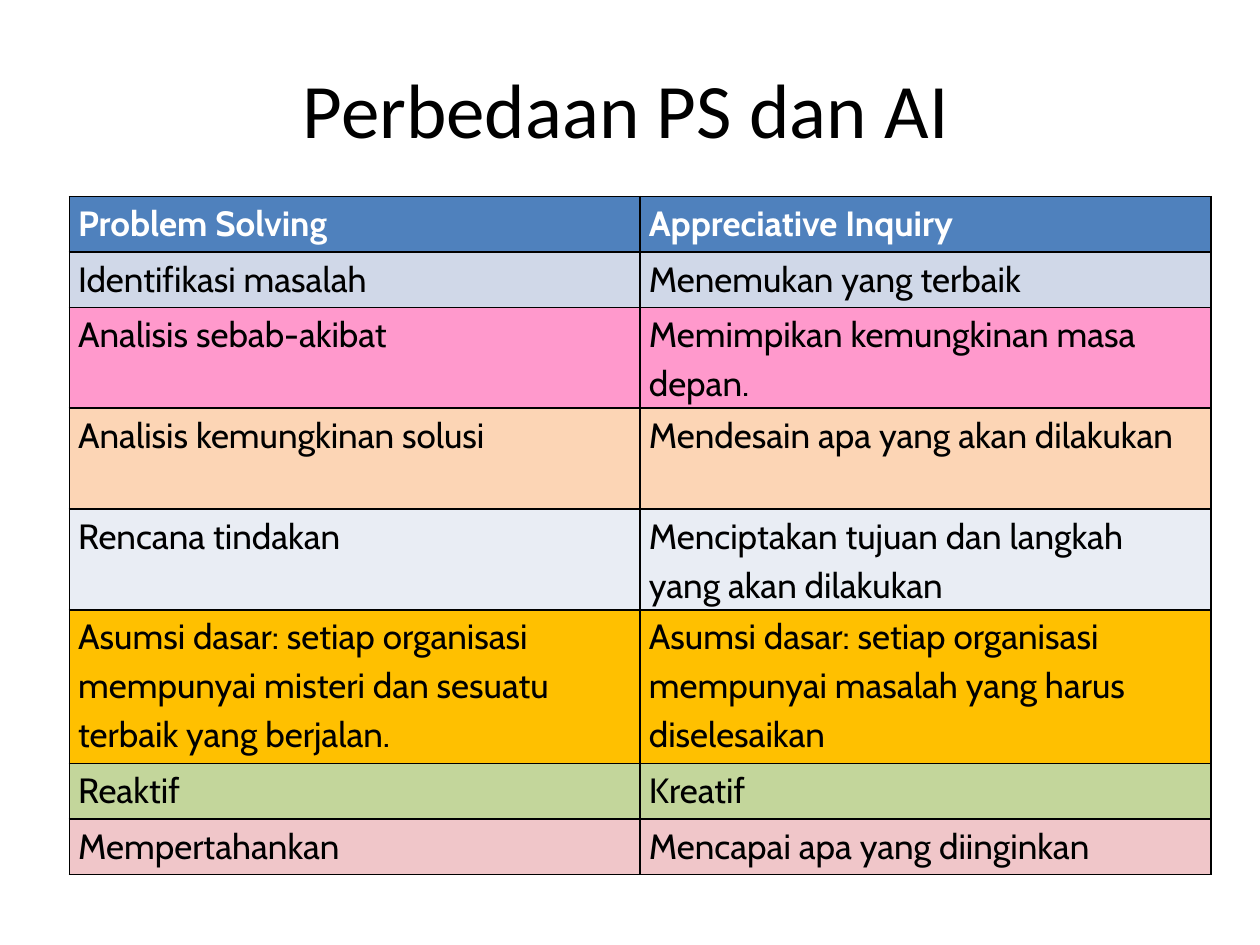
from lxml import etree
from pptx import Presentation
from pptx.dml.color import RGBColor
from pptx.enum.text import MSO_ANCHOR, PP_ALIGN
from pptx.oxml.ns import qn
from pptx.util import Inches, Pt

MIDDLE, TOP = MSO_ANCHOR.MIDDLE, MSO_ANCHOR.TOP
CENTER, LEFT, JUSTIFY = PP_ALIGN.CENTER, PP_ALIGN.LEFT, PP_ALIGN.JUSTIFY
TITLE_ONLY = 5

THEME = {
    "title": ("Calibri", 44),
    "body": ("Cabin", 20),
    "ink": "000000",
    "white": "FFFFFF",
    "head": "4F81BD",
    "blue": "D0D8E8",
    "pink": "FF99CC",
    "peach": "FCD5B5",
    "pale": "E9EDF4",
    "gold": "FFC000",
    "green": "C3D69B",
    "rose": "F0C6C9",
}
LINE = 0.44  # height of a one-line row
HEIGHTS = {1: LINE, 2: 0.8, 3: 1.22}

# fill, lines of text, alignment, left cell, right cell
ROWS = [
    ("head", 1, LEFT, "Problem Solving", "Appreciative Inquiry"),
    ("blue", 1, LEFT, "Identifikasi masalah", "Menemukan yang terbaik"),
    ("pink", 2, LEFT, "Analisis sebab-akibat", "Memimpikan kemungkinan masa depan."),
    ("peach", 2, LEFT, "Analisis kemungkinan solusi", "Mendesain apa yang akan dilakukan"),
    ("pale", 2, LEFT, "Rencana tindakan",
     "Menciptakan tujuan dan langkah yang akan dilakukan"),
    ("gold", 3, LEFT,
     "Asumsi dasar: setiap organisasi mempunyai misteri dan sesuatu terbaik yang berjalan.",
     "Asumsi dasar: setiap organisasi mempunyai masalah yang harus diselesaikan"),
    ("green", 1, JUSTIFY, "Reaktif", "Kreatif"),
    ("rose", 1, JUSTIFY, "Mempertahankan", "Mencapai apa yang diinginkan"),
]


def write(frame, text, style, color, align, bold=False):
    frame.text = text
    para = frame.paragraphs[0]
    para.alignment = align
    font = para.runs[0].font
    font.name, size = THEME[style]
    font.size = Pt(size)
    font.bold = bold
    font.color.rgb = RGBColor.from_string(THEME[color])
    return para


def frame_cell(cell):
    """Draw a thin line on all four sides; call before the cell is filled."""
    props = cell._tc.get_or_add_tcPr()
    for side in ("lnL", "lnR", "lnT", "lnB"):
        line = etree.SubElement(props, qn("a:" + side), w=str(Pt(1)))
        fill = etree.SubElement(line, qn("a:solidFill"))
        etree.SubElement(fill, qn("a:srgbClr"), val=THEME["ink"])


deck = Presentation()
deck.slide_width, deck.slide_height = Inches(10), Inches(7.5)
slide = deck.slides.add_slide(deck.slide_layouts[TITLE_ONLY])

title = slide.shapes.title
title.left, title.top = Inches(0.47), Inches(0.23)
title.width, title.height = Inches(9), Inches(1.25)
title.text_frame.vertical_anchor = MIDDLE
write(title.text_frame, "Perbedaan PS dan AI", "title", "ink", CENTER)

total = sum(HEIGHTS[row[1]] for row in ROWS)
table = slide.shapes.add_table(
    len(ROWS), 2, Inches(0.55), Inches(1.56), Inches(9.06), Inches(total)
).table

for r, (fill, lines, align, *texts) in enumerate(ROWS):
    table.rows[r].height = Inches(HEIGHTS[lines])
    head = r == 0
    for c, text in enumerate(texts):
        cell = table.cell(r, c)
        cell.margin_left = cell.margin_right = Inches(0.07)
        cell.margin_top = cell.margin_bottom = 0
        cell.vertical_anchor = TOP
        frame_cell(cell)
        cell.fill.solid()
        cell.fill.fore_color.rgb = RGBColor.from_string(THEME[fill])
        color = "white" if head else "ink"
        para = write(cell.text_frame, text, "body", color, align, head)
        para.line_spacing = 1.15

deck.save("out.pptx")
